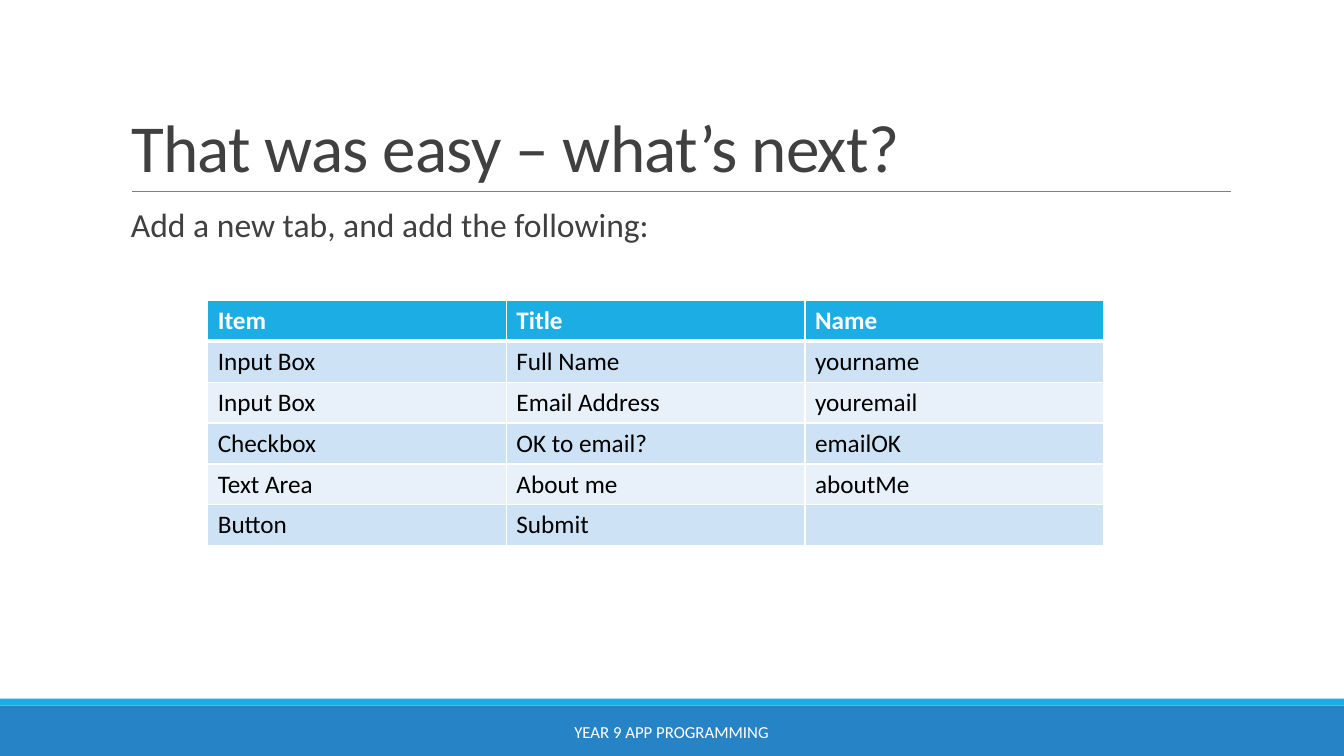
import pptx
import pptx.util
import pptx.dml.color
import pptx.enum.shapes
import pptx.enum.text
import pptx.oxml
import pptx.oxml.ns

Pt = pptx.util.Pt
ANCHOR = pptx.enum.text.MSO_ANCHOR
ALIGN = pptx.enum.text.PP_ALIGN

WIDTH, HEIGHT = 960, 540
FONT = "Calibri"
COLORS = {
    "accent": "1CADE4",
    "bar": "2683C6",
    "rule": "808080",
    "text": "404040",
    "white": "FFFFFF",
    "black": "000000",
    "band_dark": "CDE3F5",
    "band_light": "E8F1FA",
}
ITEMS = [
    ("Item", "Title", "Name"),
    ("Input Box", "Full Name", "yourname"),
    ("Input Box", "Email Address", "youremail"),
    ("Checkbox", "OK to email?", "emailOK"),
    ("Text Area", "About me", "aboutMe"),
    ("Button", "Submit", ""),
]


def rgb(name):
    return pptx.dml.color.RGBColor.from_string(COLORS[name])


def write_text(tf, text, size, color, bold=False, align=ALIGN.LEFT,
               anchor=ANCHOR.TOP, line=None, before=0, after=0, spacing=None):
    tf.word_wrap = True
    tf.auto_size = pptx.enum.text.MSO_AUTO_SIZE.NONE
    tf.vertical_anchor = anchor
    p = tf.paragraphs[0]
    p.alignment = align
    p.line_spacing = line
    p.space_before, p.space_after = Pt(before), Pt(after)
    r = p.add_run()
    r.text = text
    r.font.name, r.font.size, r.font.bold = FONT, Pt(size), bold
    r.font.color.rgb = rgb(color)
    if spacing is not None:
        r.font._element.set("spc", str(round(spacing * 100)))


def add_bar(slide, left, top, width, height, color):
    sp = slide.shapes.add_shape(pptx.enum.shapes.MSO_SHAPE.RECTANGLE,
                                Pt(left), Pt(top), Pt(width), Pt(height))
    sp.shadow.inherit = False
    sp.fill.solid()
    sp.fill.fore_color.rgb = rgb(color)
    sp.line.fill.background()


def add_footer(slide, left, top, width, height, text):
    stripe = 5
    add_bar(slide, left, top + stripe, width, height - stripe, "bar")
    add_bar(slide, left, top, width, stripe, "accent")
    box = slide.shapes.add_textbox(Pt(left + 290), Pt(top + 9.5), Pt(379.5), Pt(28.75))
    write_text(box.text_frame, text, 12, "white", align=ALIGN.CENTER, anchor=ANCHOR.MIDDLE)


def add_heading(slide, left, top, width, height, text):
    """Place the title with a rule along its bottom edge."""
    bottom = Pt(top + height)
    rule = slide.shapes.add_connector(pptx.enum.shapes.MSO_CONNECTOR.STRAIGHT,
                                      Pt(left + 8), bottom, Pt(left + width + 1), bottom)
    rule.line.color.rgb = rgb("rule")
    rule.line.width = Pt(0.5)
    rule._element.spPr.append(pptx.oxml.parse_xml(
        f"<a:effectLst {pptx.oxml.ns.nsdecls('a')}/>"))
    title = slide.shapes.title
    title.left, title.top, title.width, title.height = map(Pt, (left, top, width, height))
    write_text(title.text_frame, text, 48, "text", anchor=ANCHOR.BOTTOM,
               line=0.85, spacing=-0.5)


def add_body(slide, left, top, width, height, text):
    box = slide.shapes.add_textbox(Pt(left), Pt(top), Pt(width), Pt(height))
    write_text(box.text_frame, text, 24, "text", line=0.9, before=12, after=2)


def set_borders(cell, **widths):
    """Draw white cell borders; the keywords L, R, T and B give widths in points."""
    for side, width in widths.items():
        cell._tc.get_or_add_tcPr().append(pptx.oxml.parse_xml(
            f'<a:ln{side} {pptx.oxml.ns.nsdecls("a")} w="{Pt(width)}">'
            f'<a:solidFill><a:srgbClr val="{COLORS["white"]}"/></a:solidFill></a:ln{side}>'))


def add_item_table(slide, left, top, width, height, rows):
    table = slide.shapes.add_table(len(rows), len(rows[0]), Pt(left), Pt(top),
                                   Pt(width), Pt(height)).table
    for i, row in enumerate(rows):
        header = i == 0
        fill = "accent" if header else "band_dark" if i % 2 else "band_light"
        for j, text in enumerate(row):
            cell = table.cell(i, j)
            set_borders(cell, L=1, R=1, T=3 if i == 1 else 1, B=3 if header else 1)
            cell.fill.solid()
            cell.fill.fore_color.rgb = rgb(fill)
            write_text(cell.text_frame, text, 18, "white" if header else "black", bold=header)


def build_slide(prs):
    slide = prs.slides.add_slide(prs.slide_layouts[5])
    left, width = 86.4, 792
    add_footer(slide, 0, 499, WIDTH, HEIGHT - 499, "YEAR 9 APP PROGRAMMING")
    add_heading(slide, left, 22.5, width, 114.3, "That was easy – what’s next?")
    add_body(slide, left, 145.4, width, 316.8, "Add a new tab, and add the following:")
    add_item_table(slide, 148.4, 214.6, 640, 175.2, ITEMS)


def main():
    prs = pptx.Presentation()
    prs.slide_width, prs.slide_height = Pt(WIDTH), Pt(HEIGHT)
    build_slide(prs)
    prs.save("out.pptx")


if __name__ == "__main__":
    main()
